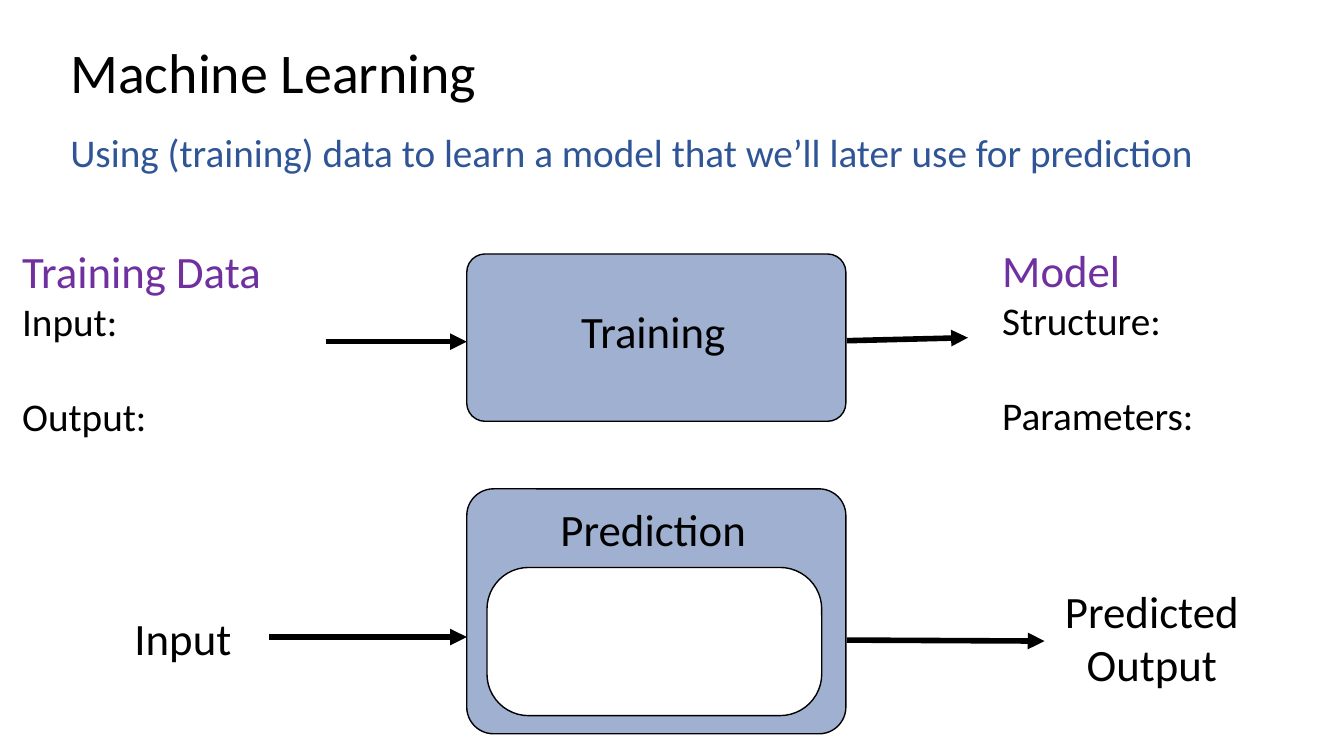
import pptx
import pptx.util
import pptx.dml.color
import pptx.enum.shapes
import pptx.enum.text
import pptx.oxml.ns
import lxml.etree

WIDE, HIGH = 13.33, 7.5
CELL = 0.1
FONT = "Calibri"
HUES = {"ink": "000000", "blue": "2F5597", "plum": "7030A0",
        "steel": "9FB0D1", "white": "FFFFFF"}
ALIGN = pptx.enum.text.PP_ALIGN
ANCHOR = pptx.enum.text.MSO_ANCHOR
TIGHT = (0.04, 0, 0.04, 0)


def span(cells):
    """Turn a count of grid cells into a length."""
    return pptx.util.Inches(round(cells * CELL, 3))


def tint(name):
    """Look up a colour by name."""
    return pptx.dml.color.RGBColor.from_string(HUES[name])


def frame(box, part):
    """Place a part, given in cells, inside a box."""
    return [span(n) for n in (box[0] + part[0], box[1] + part[1], *part[2:])]


def write(slide, box, part, lines, align=ALIGN.LEFT, anchor=ANCHOR.TOP,
          pads=TIGHT, pitch=None):
    """Add a text box of (text, size, hue, gap before) lines."""
    text = slide.shapes.add_textbox(*frame(box, part)).text_frame
    text.word_wrap = True
    text.vertical_anchor = anchor
    (text.margin_left, text.margin_top,
     text.margin_right, text.margin_bottom) = map(pptx.util.Inches, pads)
    for i, (words, size, hue, gap) in enumerate(lines):
        para = text.add_paragraph() if i else text.paragraphs[0]
        para.alignment = align
        para.space_before = pptx.util.Pt(gap)
        if pitch:
            para.line_spacing = pitch
        run = para.add_run()
        run.text = words
        run.font.name = FONT
        run.font.size = pptx.util.Pt(size)
        run.font.color.rgb = tint(hue)


def label(slide, box, part, *words, anchor=ANCHOR.MIDDLE):
    """Add a centred label, one line per word."""
    lines = [(word, 32, "ink", 0) for word in words]
    write(slide, box, part, lines, ALIGN.CENTER, anchor)


def facts(slide, box, part, head, first, last):
    """Add a coloured heading over two spaced items."""
    lines = [(head, 32, "plum", 0), (first, 28, "ink", 0), (last, 28, "ink", 34)]
    write(slide, box, part, lines, anchor=ANCHOR.MIDDLE)


def panel(slide, box, part, hue, bend):
    """Add a rounded, outlined panel."""
    kind = pptx.enum.shapes.MSO_SHAPE.ROUNDED_RECTANGLE
    shape = slide.shapes.add_shape(kind, *frame(box, part))
    shape.adjustments[0] = bend
    shape.shadow.inherit = False
    shape.fill.solid()
    shape.fill.fore_color.rgb = tint(hue)
    shape.line.color.rgb = tint("ink")
    shape.line.width = pptx.util.Pt(1)


def arrow(slide, box, start, end):
    """Add a thick arrow between two points of a box."""
    kind = pptx.enum.shapes.MSO_CONNECTOR.STRAIGHT
    ends = [span(b + n) for point in (start, end) for b, n in zip(box, point)]
    wire = slide.shapes.add_connector(kind, *ends)
    wire.line.color.rgb = tint("ink")
    wire.line.width = pptx.util.Pt(4)
    name = pptx.oxml.ns.qn
    tip = lxml.etree.SubElement(wire.line._get_or_add_ln(), name("a:tailEnd"))
    tip.set("type", "triangle")
    lxml.etree.SubElement(wire._element.spPr, name("a:effectLst"))


def header(slide, box):
    """Add the title and the sentence below it."""
    write(slide, box, (0, 0, 115, 6.9), [("Machine Learning", 40, "ink", 0)],
          anchor=ANCHOR.MIDDLE, pads=(0.1, 0.05, 0.14, 0.05), pitch=0.9)
    words = "Using (training) data to learn a model that we’ll later use for prediction"
    write(slide, box, (0, 8.2, 119.6, 29.2), [(words, 28, "blue", 0)],
          pads=(0.1, 0.05, 0.1, 0.05))


def train(slide, box):
    """Add the training row: data, panel, model."""
    panel(slide, box, (46.3, 0, 37.6, 16.6), "steel", 0.109)
    label(slide, box, (50.3, 4.9, 29, 5.1), "Training", anchor=ANCHOR.TOP)
    facts(slide, box, (1.8, 0, 30.4, 17.4), "Training Data", "Input:", "Output:")
    facts(slide, box, (99, -0.1, 30.4, 17.4), "Model", "Structure:", "Parameters:")
    arrow(slide, box, (32.3, 8.7), (46.3, 8.7))
    arrow(slide, box, (84, 8.6), (96, 8.3))


def predict(slide, box):
    """Add the prediction row: input, panel, output."""
    panel(slide, box, (46.3, 0, 37.6, 24.3), "steel", 0.109)
    panel(slide, box, (48.3, 7.8, 33.2, 14.7), "white", 0.281)
    label(slide, box, (50.3, 1.3, 29, 5.1), "Prediction", anchor=ANCHOR.TOP)
    label(slide, box, (9.5, 10.2, 17.3, 9.1), "Input")
    label(slide, box, (103.6, 9.5, 21.3, 10.4), "Predicted", "Output")
    arrow(slide, box, (26.7, 14.7), (46.3, 14.7))
    arrow(slide, box, (84, 15), (103.6, 15.1))


def main():
    """Build and save the slide."""
    deck = pptx.Presentation()
    deck.slide_width = pptx.util.Inches(WIDE)
    deck.slide_height = pptx.util.Inches(HIGH)
    slide = deck.slides.add_slide(deck.slide_layouts[6])
    header(slide, (6, 4))
    train(slide, (0, 25.2))
    predict(slide, (0, 48.5))
    deck.save("out.pptx")


if __name__ == "__main__":
    main()
